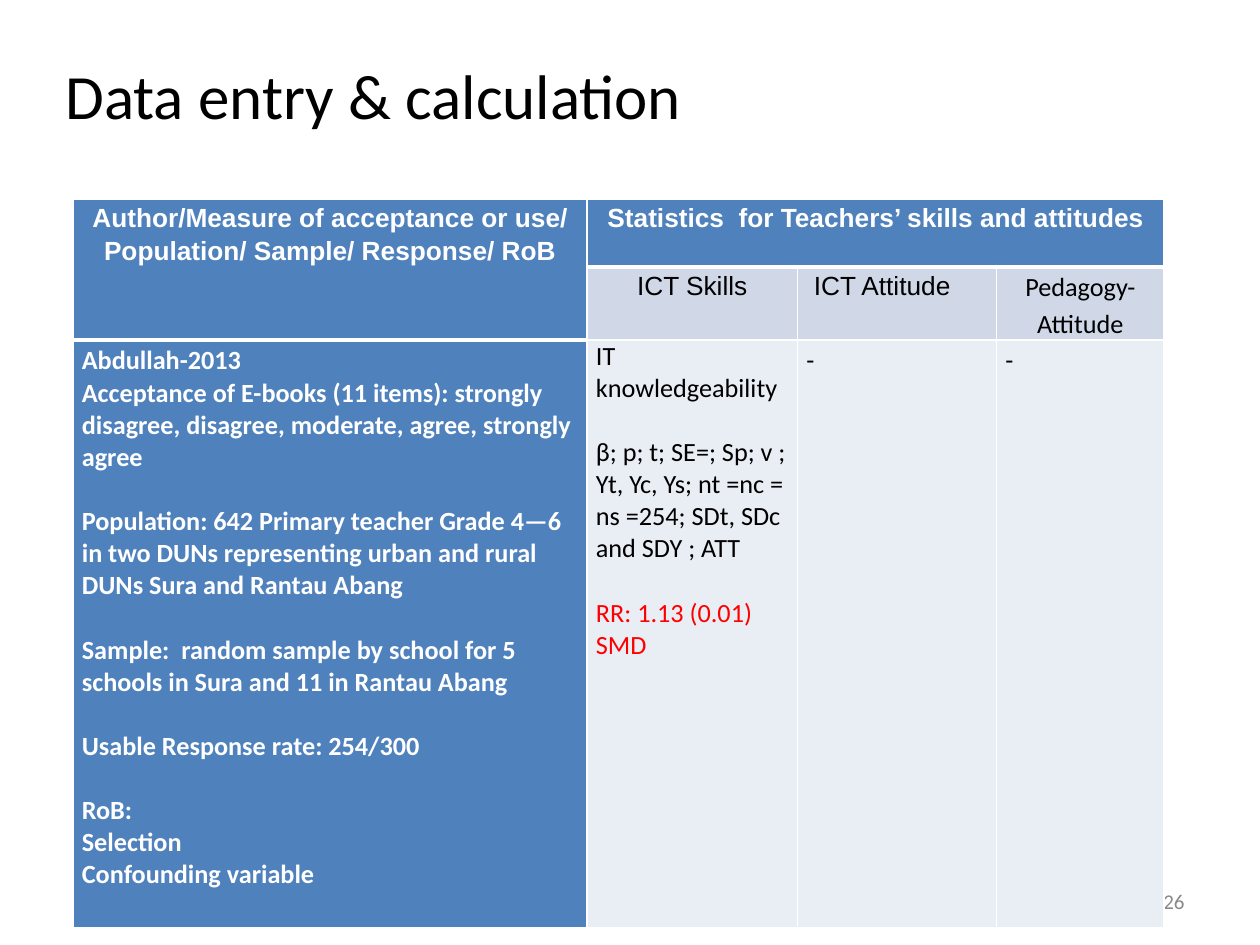
from lxml import etree
from pptx import Presentation
from pptx.dml.color import RGBColor
from pptx.enum.text import MSO_ANCHOR, PP_ALIGN
from pptx.oxml.ns import qn
from pptx.util import Inches, Pt

LEFT, CENTER, RIGHT = PP_ALIGN.LEFT, PP_ALIGN.CENTER, PP_ALIGN.RIGHT
MIDDLE = MSO_ANCHOR.MIDDLE
COLORS = {
    "white": "FFFFFF", "black": "000000", "gray": "898989", "red": "FF0000",
    "header": "4F81BD", "subheader": "D0D8E8", "body": "E9EDF4",
}
HEADER = {"name": "Arial", "size": Pt(15), "bold": True, "color": "white"}
ARIAL = {"name": "Arial", "size": Pt(15), "bold": False, "color": "black"}
PLAIN = ARIAL | {"name": "Calibri"}
STUDY = HEADER | {"name": "Calibri"}
RESULT = PLAIN | {"color": "red"}
WIDE, SINGLE = 1.15, 1.0


def write_paragraphs(frame, lines):
    for index, (text, font, align, spacing, gap) in enumerate(lines):
        paragraph = frame.paragraphs[0] if index == 0 else frame.add_paragraph()
        paragraph.alignment = align
        paragraph.line_spacing = spacing
        paragraph.space_before = Pt(gap)
        run = paragraph.add_run()
        run.text = text
        for name, value in font.items():
            if name == "color":
                run.font.color.rgb = RGBColor.from_string(COLORS[value])
            else:
                setattr(run.font, name, value)


def draw_borders(cell, widths):
    properties = cell._tc.get_or_add_tcPr()
    for position, (side, points) in enumerate(widths.items()):
        line = etree.Element(qn(f"a:ln{side}"), w=str(Pt(points)))
        fill = etree.SubElement(line, qn("a:solidFill"))
        etree.SubElement(fill, qn("a:srgbClr"), val=COLORS["white"])
        properties.insert(position, line)


presentation = Presentation()
presentation.slide_width = Inches(10)
presentation.slide_height = Inches(7.5)
slide = presentation.slides.add_slide(presentation.slide_layouts[6])

labels = [
    ((7.17, 6.95, 2.33, 0.4), "26", 12, "gray", RIGHT),
    ((0.42, 0.25, 9.58, 1), "Data entry & calculation", 36, "black", LEFT),
]
for box, text, size, color, align in labels:
    frame = slide.shapes.add_textbox(*map(Inches, box)).text_frame
    frame.word_wrap = True
    frame.vertical_anchor = MIDDLE
    font = {"name": "Calibri", "size": Pt(size), "color": color}
    write_paragraphs(frame, [(text, font, align, SINGLE, 0)])

column_widths = [4.08, 1.67, 1.58, 1.33]
row_heights = [0.54, 0.58, 4.66]
table = slide.shapes.add_table(
    len(row_heights), len(column_widths), Inches(0.58), Inches(1.58),
    Inches(sum(column_widths)), Inches(sum(row_heights)),
).table
for column, width in zip(table.columns, column_widths):
    column.width = Inches(width)
for row, height in zip(table.rows, row_heights):
    row.height = Inches(height)

study_lines = [
    ("Abdullah-2013", WIDE, 0),
    ("Acceptance of E-books (11 items): strongly disagree, disagree, moderate, agree, strongly agree", SINGLE, 0),
    ("Population: 642 Primary teacher Grade 4—6 in two DUNs representing urban and rural DUNs Sura and Rantau Abang", SINGLE, 18.3),
    ("Sample:  random sample by school for 5 schools in Sura and 11 in Rantau Abang", SINGLE, 18.3),
    ("Usable Response rate: 254/300", SINGLE, 18.3),
    ("RoB:", SINGLE, 18.3),
    ("Selection", SINGLE, 0),
    ("Confounding variable", SINGLE, 0),
]
contents = {
    (0, 0): [("Author/Measure of acceptance or use/ Population/ Sample/ Response/ RoB", HEADER, CENTER, WIDE, 0)],
    (0, 1): [("Statistics  for Teachers’ skills and attitudes", HEADER, CENTER, WIDE, 0)],
    (1, 1): [("ICT Skills", ARIAL, CENTER, WIDE, 0)],
    (1, 2): [("ICT Attitude", ARIAL, LEFT, WIDE, 0)],
    (1, 3): [("Pedagogy-Attitude", PLAIN, CENTER, WIDE, 0)],
    (2, 0): [(text, STUDY, LEFT, spacing, gap) for text, spacing, gap in study_lines],
    (2, 1): [
        ("IT knowledgeability", PLAIN, LEFT, SINGLE, 0),
        ("β; p; t; SE=; Sp; v ; Yt, Yc, Ys; nt =nc = ns =254; SDt, SDc and SDY ; ATT", PLAIN, LEFT, SINGLE, 18.3),
        ("RR: 1.13 (0.01)", RESULT, LEFT, SINGLE, 18.3),
        ("SMD", RESULT, LEFT, SINGLE, 0),
    ],
    (2, 2): [("-", PLAIN, LEFT, WIDE, 0)],
    (2, 3): [("-", PLAIN, LEFT, WIDE, 0)],
}
row_fills = ["header", "subheader", "body"]
margins = {"margin_left": 0.07, "margin_right": 0.07, "margin_top": 0, "margin_bottom": 0}

for row in range(len(row_heights)):
    for column in range(len(column_widths)):
        cell = table.cell(row, column)
        for name, value in margins.items():
            setattr(cell, name, Inches(value))
        cell.fill.solid()
        fill = "header" if column == 0 else row_fills[row]
        cell.fill.fore_color.rgb = RGBColor.from_string(COLORS[fill])
        header_end = 1 if column == 0 else 0
        draw_borders(cell, {
            "L": 1, "R": 1,
            "T": 3 if row == header_end + 1 else 1,
            "B": 3 if row <= header_end else 1,
        })
        write_paragraphs(cell.text_frame, contents.get((row, column), []))

table.cell(1, 2).margin_left = Inches(0.13)
table.cell(0, 0).merge(table.cell(1, 0))
table.cell(0, 1).merge(table.cell(0, 3))

presentation.save("out.pptx")
